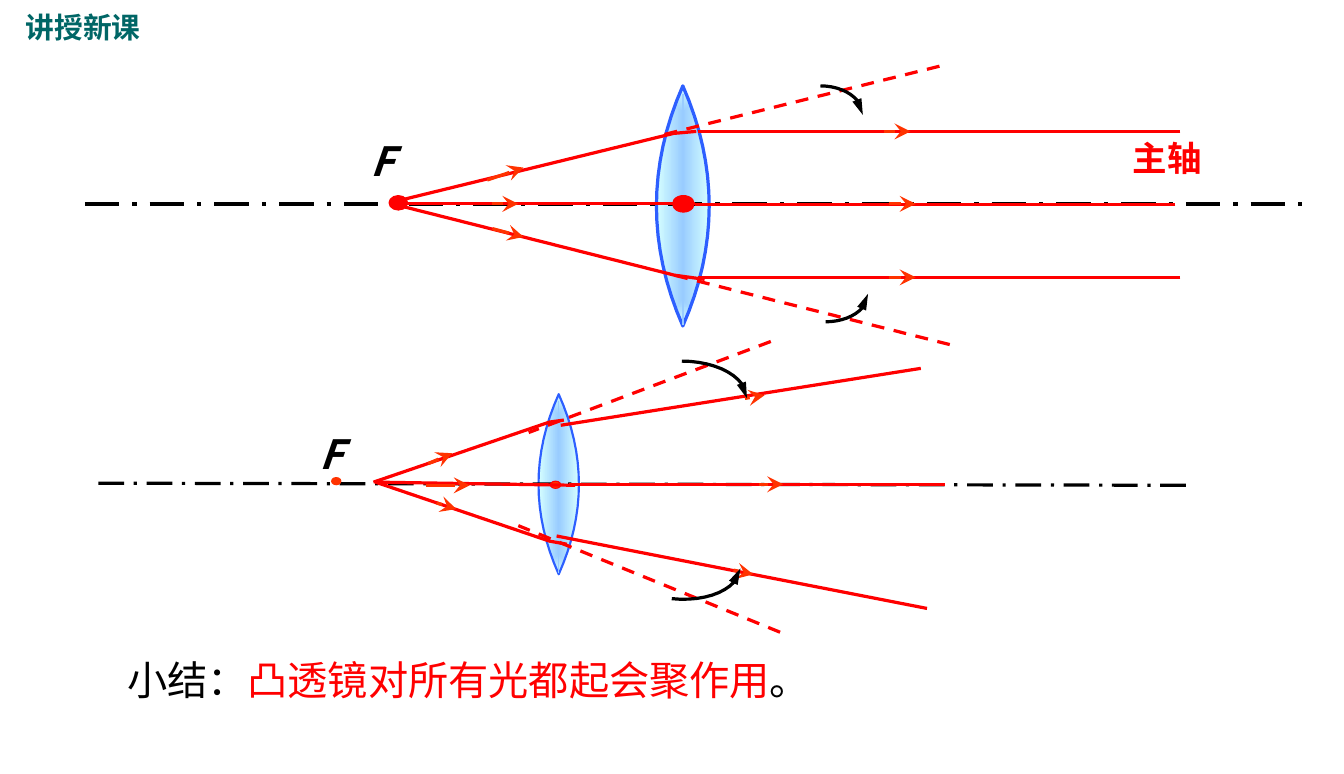
from math import cos, sin, pi
from lxml.etree import SubElement as Sub
from pptx import Presentation
from pptx.dml.color import RGBColor as RGB
from pptx.enum.dml import MSO_LINE as Dash
from pptx.enum.shapes import MSO_CONNECTOR as Link, MSO_SHAPE as Shape
from pptx.oxml.ns import qn
from pptx.util import Inches, Pt

WIDE, HIGH = 12.99, 7.48
CELL = Inches(1)  # the grid has cells of one inch
INK = {"black": "000000", "red": "FF0000", "flame": "FF3300", "rim": "2D5FFF",
       "core": "99CCFF", "edge": "D5FFFF", "teal": "006666"}
SANS = "Noto Sans CJK SC"
HEADS = {"stealth": {"type": "stealth", "w": "lg", "len": "lg"},
         "triangle": {"type": "triangle", "w": "med", "len": "lg"}}

# text: runs with colours, place, size, font, bold, italic, space before
TEXTS = [
    ([("F", "black")], (3.48, 1.27, 0.72, 0.57), 28, SANS, True, True, True),
    ([("主轴", "red")], (10.85, 1.27, 1.79, 0.51), 24, SANS, True, False, True),
    ([("F", "black")], (2.99, 4.1, 0.76, 0.57), 28, SANS, True, True, True),
    ([("小结：", "black"), ("凸透镜对所有光都起会聚作用", "red"), ("。", "black")],
     (1.13, 6.28, 6.88, 0.57), 28, SANS, False, False, False),
    ([("讲授新课", "teal")], (0.15, 0.05, 1.84, 0.44), 20, "Arial", True, False, False),
]

FIGURES = [
    {   # light source at the focus
        "lens": (6.6, 1.99, 0.255, 1.16, 2.25),
        "axis": ((0.82, 1.97), (12.64, 1.97), 3),
        "dots": [((6.5, 1.89, 0.21, 0.16), "red", True),
                 ((3.76, 1.89, 0.18, 0.14), "red", True)],
        "rays": [
            [(6.73, 1.27), (6.51, 1.29), (3.89, 1.93)],
            [(6.81, 2.7), (6.52, 2.66), (3.79, 1.97)],
            [(6.72, 1.97), (3.83, 1.97)],
            [(11.41, 1.27), (6.75, 1.27)],
            [(11.36, 1.98), (6.72, 1.98)],
            [(11.41, 2.68), (6.75, 2.68)],
        ],
        "heads": [
            [(4.71, 1.74), (5.06, 1.62)], [(4.76, 2.21), (5.06, 2.29)],
            [(4.76, 1.97), (5.01, 1.97)], [(8.54, 1.27), (8.8, 1.27)],
            [(8.59, 1.97), (8.85, 1.97)], [(8.59, 2.68), (8.85, 2.68)],
        ],
        "dashes": [[(9.08, 0.64), (6.34, 1.32)], [(9.18, 3.33), (6.44, 2.64)]],
        "turns": [((7.93, 0.83), (8.34, 1.11), 0), ((7.98, 3.11), (8.39, 2.84), 0)],
    },
    {   # light source inside the focus
        "lens": (5.4, 4.68, 0.195, 0.87, 1.5),
        "axis": ((0.95, 4.67), (11.49, 4.69), 2.25),
        "dots": [((5.32, 4.65, 0.1, 0.07), "flame", True),
                 ((3.2, 4.61, 0.1, 0.08), "flame", False)],
        "rays": [
            [(5.45, 4.06), (5.31, 4.08), (3.61, 4.66)],
            [(5.48, 5.26), (5.31, 5.23), (3.63, 4.66)],
            [(5.56, 4.69), (3.66, 4.66)],
            [(8.9, 3.56), (5.42, 4.11)],
            [(9.13, 4.68), (5.5, 4.68)],
            [(8.96, 5.88), (5.38, 5.18)],
        ],
        "heads": [
            [(4.14, 4.48), (4.37, 4.38)], [(4.22, 4.86), (4.41, 4.92)],
            [(4.12, 4.69), (4.54, 4.69)], [(7.2, 3.85), (7.39, 3.82)],
            [(7.34, 4.68), (7.57, 4.68)], [(7.09, 5.51), (7.28, 5.55)],
        ],
        "dashes": [[(7.45, 3.3), (5.11, 4.18)], [(7.54, 6.11), (5.01, 5.08)]],
        "turns": [((6.59, 3.49), (7.22, 3.85), 0), ((6.51, 5.82), (7.14, 5.46), 6)],
    },
]

deck = Presentation()
deck.slide_width, deck.slide_height = Inches(WIDE), Inches(HIGH)
slide = deck.slides.add_slide(deck.slide_layouts[6])
shapes = slide.shapes


def grid(*cells):
    return [round(c * CELL) for c in cells]


def tint(hue):
    return RGB.from_string(INK[hue])


def pen(item, hue, width, dash=None, head=None):
    """Style the outline of a shape or connector."""
    line = item.line
    line.color.rgb = tint(hue)
    line.width = Pt(width)
    if dash:
        line.dash_style = dash
    if head:
        Sub(line._get_or_add_ln(), qn("a:tailEnd"), HEADS[head])


def trace(points, hue, width, dash=None, head=None, closed=False):
    """Draw a connector through two points, or an outline through more."""
    spots = [grid(*point) for point in points]
    if len(spots) == 2:
        item = shapes.add_connector(Link.STRAIGHT, *spots[0], *spots[1])
        Sub(item._element.spPr, qn("a:effectLst"))
    else:
        form = shapes.build_freeform(*spots[0])
        form.add_line_segments(spots[1:], close=closed)
        item = form.convert_to_shape()
        item.shadow.inherit = False
        item.fill.background()
    pen(item, hue, width, dash, head)
    return item


def draw_lens(x, y, half, tall, width, steps=8):
    rise = [k / steps for k in range(-steps, steps + 1)]
    left = [(x - half * (1 - u * u), y + tall * u) for u in rise]
    right = [(x + half * (1 - u * u), y + tall * u) for u in rise[-2:0:-1]]
    lens = trace(left + right, "rim", width, closed=True)
    lens.fill.gradient()
    for stop, hue, at in zip(lens.fill.gradient_stops, ("core", "edge"), (0, 1)):
        stop.color.rgb, stop.position = tint(hue), at
    grad = lens._element.spPr.find(qn("a:gradFill"))
    grad.remove(grad.find(qn("a:lin")))
    glow = Sub(grad, qn("a:path"), path="shape")
    Sub(glow, qn("a:fillToRect"), {side: "50000" for side in "ltrb"})
    trace([(x, y - 0.93 * tall), (x, y + 0.99 * tall)], "core", 1)


def draw_dot(place, hue, rim):
    dot = shapes.add_shape(Shape.OVAL, *grid(*place))
    dot.shadow.inherit = False
    dot.fill.solid()
    dot.fill.fore_color.rgb = tint(hue)
    if rim:
        pen(dot, "red", 0.75)
    else:
        dot.line.fill.background()


def draw_turn(start, end, angle, steps=12):
    """Draw a quarter of an ellipse with an arrowhead."""
    (x0, y0), (x1, y1) = start, end
    turns = [k * pi / 2 / steps for k in range(steps + 1)]
    arc = [(x0 + (x1 - x0) * sin(t), y1 + (y0 - y1) * cos(t)) for t in turns]
    trace(arc, "black", 2.25, head="triangle").rotation = angle


def write(runs, place, size, face, bold, slant, gap):
    box = shapes.add_textbox(*grid(*place))
    box.text_frame.word_wrap = True
    para = box.text_frame.paragraphs[0]
    font = para.font
    font.size, font.name, font.bold, font.italic = Pt(size), face, bold, slant
    Sub(font._element, qn("a:ea"), typeface=SANS)
    if gap:
        para.space_before = Pt(size / 2)
    for words, hue in runs:
        run = para.add_run()
        run.text = words
        run.font.color.rgb = tint(hue)


for fig in FIGURES:
    draw_lens(*fig["lens"])
    start, end, width = fig["axis"]
    trace([start, end], "black", width, Dash.LONG_DASH_DOT)
    for dot in fig["dots"]:
        draw_dot(*dot)
    for ray in fig["rays"]:
        trace(ray, "red", 2.25)
    for head in fig["heads"]:
        trace(head, "flame", 2.25, head="stealth")
    for dash in fig["dashes"]:
        trace(dash, "red", 2.25, Dash.DASH)
    for turn in fig["turns"]:
        draw_turn(*turn)
for text in TEXTS:
    write(*text)

deck.save("out.pptx")
